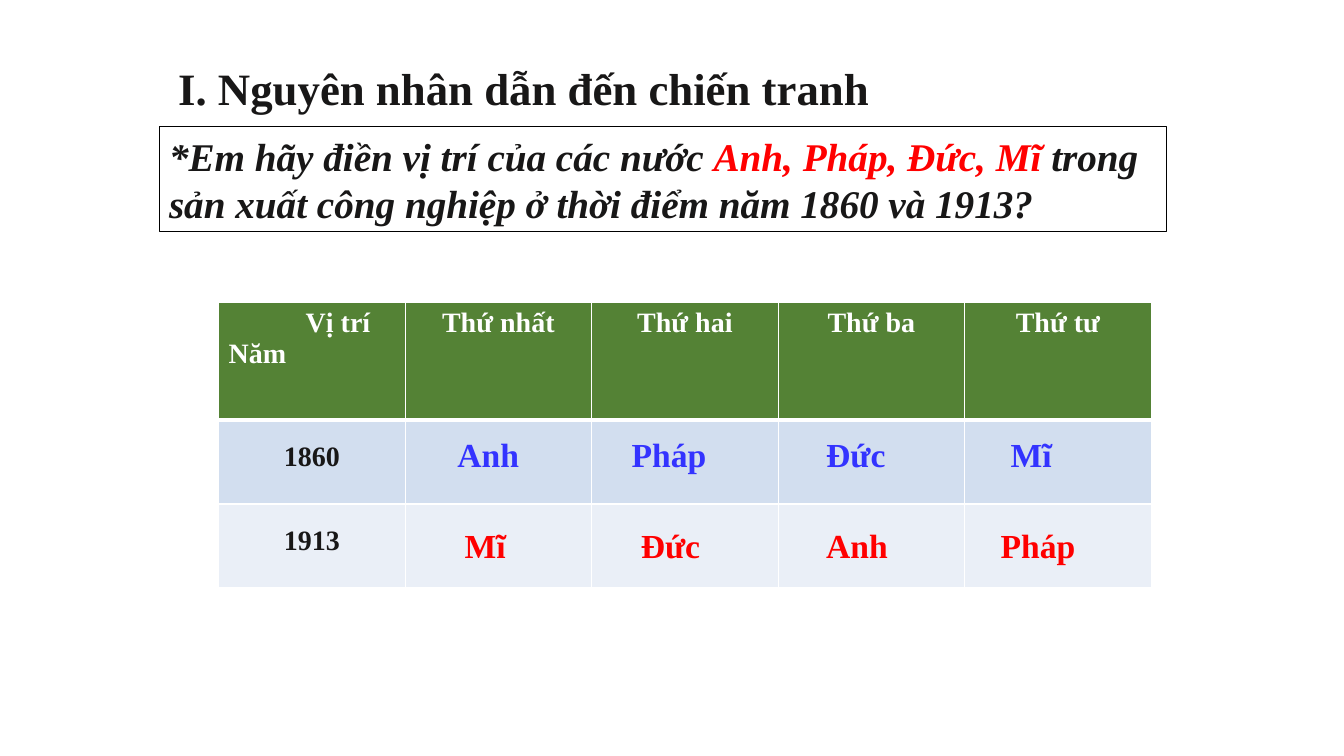
"""Builds the slide on the causes of the war, with the industry ranking table."""
import pptx
import pptx.dml.color
import pptx.enum.shapes
import pptx.enum.text
import pptx.oxml
import pptx.oxml.ns
import pptx.util

Cm, Pt = pptx.util.Cm, pptx.util.Pt
RGBColor = pptx.dml.color.RGBColor
PP_ALIGN = pptx.enum.text.PP_ALIGN

FONT = "Times New Roman"
INK = RGBColor(0x18, 0x17, 0x17)
BLACK = RGBColor(0, 0, 0)
WHITE = RGBColor(0xFF, 0xFF, 0xFF)
RED = RGBColor(0xFF, 0, 0)
BLUE = RGBColor(0x33, 0x33, 0xFF)
GREEN = RGBColor(0x54, 0x82, 0x35)
ROW_FILLS = [GREEN, RGBColor(0xD2, 0xDE, 0xEF), RGBColor(0xEA, 0xEF, 0xF7)]

TITLE = "I. Nguyên nhân dẫn đến chiến tranh"
QUESTION = [
    ("*Em hãy điền vị trí của các nước ", INK),
    ("Anh, Pháp, Đức, Mĩ ", RED),
    ("trong sản xuất công nghiệp ở thời điểm năm 1860 và 1913?", INK),
]
CORNER = ["Vị trí", "Năm"]
RANKS = ["Thứ nhất", "Thứ hai", "Thứ ba", "Thứ tư"]
YEARS = ["1860", "1913"]
ANSWERS = [
    (10.8, BLUE, [("Anh", 11.28), ("Pháp", 15.67), ("Đức", 20.57), ("Mĩ", 25.22)]),
    (13.11, RED, [("Mĩ", 11.46), ("Đức", 15.9), ("Anh", 20.57), ("Pháp", 24.97)]),
]
COL_WIDTH = 4.7
ROW_HEIGHTS = [2.97, 2.11, 2.11]


def style(p, size, color=None, italic=None):
    p.font.name, p.font.size = FONT, Pt(size)
    p.font.bold, p.font.italic = True, italic
    if color is not None:
        p.font.color.rgb = color


def add_label(slide, text, left, top, width, height, size, color):
    tf = slide.shapes.add_textbox(Cm(left), Cm(top), Cm(width), Cm(height)).text_frame
    tf.word_wrap = True
    tf.text = text
    style(tf.paragraphs[0], size, color)


def add_question(slide):
    sp = slide.shapes.add_shape(pptx.enum.shapes.MSO_SHAPE.RECTANGLE,
                                Cm(4.01), Cm(3.2), Cm(25.4), Cm(2.64))
    sp.shadow.inherit = False
    sp.fill.background()
    sp.line.color.rgb = BLACK
    sp.line.width = Pt(0.75)
    tf = sp.text_frame
    tf.word_wrap = True
    p = tf.paragraphs[0]
    p.alignment = PP_ALIGN.LEFT
    style(p, 28, italic=True)
    for text, color in QUESTION:
        r = p.add_run()
        r.text = text
        r.font.color.rgb = color


def set_borders(cell, widths):
    tcPr = cell._tc.get_or_add_tcPr()
    for side, width in zip("LRTB", widths):
        tcPr.append(pptx.oxml.parse_xml(
            f'<a:ln{side} {pptx.oxml.ns.nsdecls("a")} w="{Pt(width)}">'
            f'<a:solidFill><a:srgbClr val="{WHITE}"/></a:solidFill></a:ln{side}>'))


def add_ranking(slide):
    rows = [["\n".join(CORNER)] + RANKS] + [[year] + [""] * len(RANKS) for year in YEARS]
    n_cols = len(rows[0])
    table = slide.shapes.add_table(len(rows), n_cols, Cm(5.51), Cm(7.62),
                                   Cm(COL_WIDTH * n_cols), Cm(sum(ROW_HEIGHTS))).table
    for col in table.columns:
        col.width = Cm(COL_WIDTH)
    for i, (texts, height, fill) in enumerate(zip(rows, ROW_HEIGHTS, ROW_FILLS)):
        table.rows[i].height = Cm(height)
        for j, text in enumerate(texts):
            cell = table.cell(i, j)
            set_borders(cell, (1, 1, 3 if i == 1 else 1, 3 if i == 0 else 1))
            cell.fill.solid()
            cell.fill.fore_color.rgb = fill
            cell.margin_top = Cm(0.54 if i else 0.13)
            cell.text_frame.text = text
            for p in cell.text_frame.paragraphs:
                p.alignment = PP_ALIGN.CENTER if i or j else PP_ALIGN.LEFT
                style(p, 20, INK if i else WHITE)
    corner = table.cell(0, 0).text_frame.paragraphs[0]
    corner._p.get_or_add_pPr().set("marL", str(Cm(1.94)))


def main():
    prs = pptx.Presentation()
    prs.slide_width, prs.slide_height = Cm(33.87), Cm(19.05)
    slide = prs.slides.add_slide(prs.slide_layouts[6])
    add_question(slide)
    add_label(slide, TITLE, 4.24, 1.4, 18.62, 1.63, 32, INK)
    add_ranking(slide)
    for top, color, names in ANSWERS:
        for name, left in names:
            add_label(slide, name, left, top, 3, 1.28, 24, color)
    prs.save("out.pptx")


if __name__ == "__main__":
    main()
